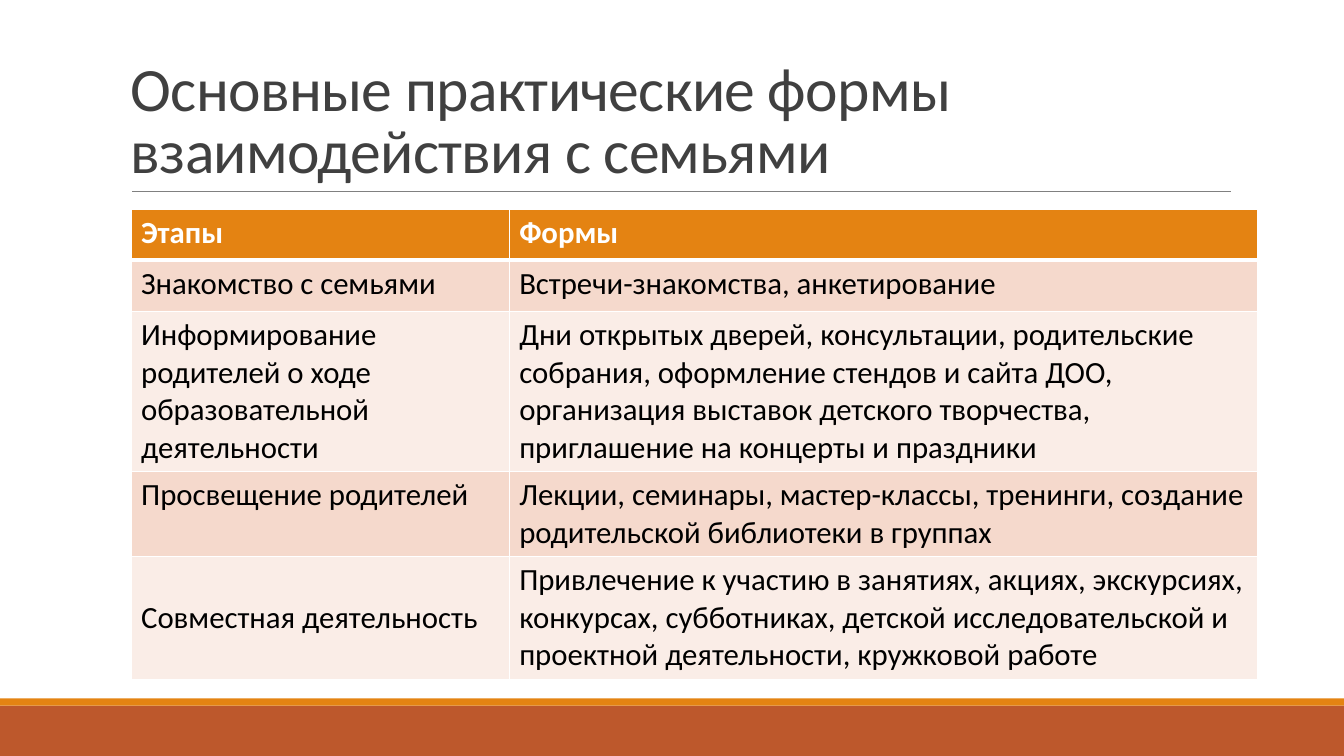
"""Build a slide with a table of ways to work with families."""
from dataclasses import dataclass

from lxml.etree import SubElement
from pptx import Presentation
from pptx.dml.color import RGBColor
from pptx.enum.shapes import MSO_CONNECTOR as Connector, MSO_SHAPE as Shape
from pptx.enum.text import MSO_ANCHOR as Anchor
from pptx.oxml.ns import qn
from pptx.util import Inches, Pt


@dataclass(frozen=True)
class Theme:
    font: str = "Calibri"
    title_size: int = 44
    table_size: int = 22
    title: str = "404040"
    text: str = "000000"
    white: str = "FFFFFF"
    rule: str = "808080"
    orange: str = "E48312"
    rust: str = "BD582C"
    bands: tuple = ("F5D9CC", "FAEDE7")


def style_run(run, size, color, bold=False):
    run.font.name = theme.font
    run.font.size = Pt(size)
    run.font.bold = bold
    run.font.color.rgb = RGBColor.from_string(color)


def add_border(cell, side, width):
    line = SubElement(cell._tc.get_or_add_tcPr(), qn(f"a:ln{side}"), w=str(Pt(width)))
    fill = SubElement(line, qn("a:solidFill"))
    SubElement(fill, qn("a:srgbClr"), val=theme.white)


theme = Theme()
presentation = Presentation()
presentation.slide_width = Inches(13.33)
presentation.slide_height = Inches(7.5)
slide = presentation.slides.add_slide(presentation.slide_layouts[6])

for top, height, color in ((7, 0.5, theme.rust), (6.93, 0.07, theme.orange)):
    band = slide.shapes.add_shape(
        Shape.RECTANGLE, 0, Inches(top), presentation.slide_width, Inches(height)
    )
    band.shadow.inherit = False
    band.fill.solid()
    band.fill.fore_color.rgb = RGBColor.from_string(color)
    band.line.fill.background()

rule = slide.shapes.add_connector(
    Connector.STRAIGHT, Inches(1.31), Inches(1.9), Inches(12.21), Inches(1.9)
)
rule.line.color.rgb = RGBColor.from_string(theme.rule)
rule.line.width = Pt(0.5)
SubElement(rule._element.spPr, qn("a:effectLst"))

title = slide.shapes.add_textbox(Inches(1.2), Inches(0.31), Inches(11), Inches(1.59))
title_frame = title.text_frame
title_frame.word_wrap = True
title_frame.vertical_anchor = Anchor.BOTTOM
title_frame.text = "Основные практические формы взаимодействия с семьями"
title_paragraph = title_frame.paragraphs[0]
title_paragraph.line_spacing = 0.85
title_run = title_paragraph.runs[0]
style_run(title_run, theme.title_size, theme.title)
title_run._r.get_or_add_rPr().set("spc", "-50")

rows = (
    ("Этапы", "Формы"),
    ("Знакомство с семьями", "Встречи-знакомства, анкетирование"),
    (
        "Информирование родителей о ходе образовательной деятельности",
        "Дни открытых дверей, консультации, родительские собрания, "
        "оформление стендов и сайта ДОО, организация выставок детского "
        "творчества, приглашение на концерты и праздники",
    ),
    (
        "Просвещение родителей",
        "Лекции, семинары, мастер-классы, тренинги, создание "
        "родительской библиотеки в группах",
    ),
    (
        "Совместная деятельность",
        "Привлечение к участию в занятиях, акциях, экскурсиях, конкурсах, "
        "субботниках, детской исследовательской и проектной деятельности, "
        "кружковой работе",
    ),
)
column_widths = (3.75, 7.42)
row_heights = (0.5, 0.51, 1.59, 0.84, 1.22)
table = slide.shapes.add_table(
    len(rows), len(column_widths), Inches(1.3), Inches(2.08),
    Inches(sum(column_widths)), Inches(sum(row_heights)),
).table
for column, width in zip(table.columns, column_widths):
    column.width = Inches(width)

for row_index, (texts, height) in enumerate(zip(rows, row_heights)):
    table.rows[row_index].height = Inches(height)
    header = row_index == 0
    fill_color = theme.orange if header else theme.bands[(row_index - 1) % 2]
    text_color = theme.white if header else theme.text
    border_widths = {"L": 1, "R": 1, "T": 3 if row_index == 1 else 1, "B": 3 if header else 1}
    for column_index, text in enumerate(texts):
        cell = table.cell(row_index, column_index)
        for side, width in border_widths.items():
            add_border(cell, side, width)
        cell.fill.solid()
        cell.fill.fore_color.rgb = RGBColor.from_string(fill_color)
        cell.text_frame.text = text
        style_run(cell.text_frame.paragraphs[0].runs[0], theme.table_size, text_color, header)

table.cell(len(rows) - 1, 0).vertical_anchor = Anchor.MIDDLE

presentation.save("out.pptx")
